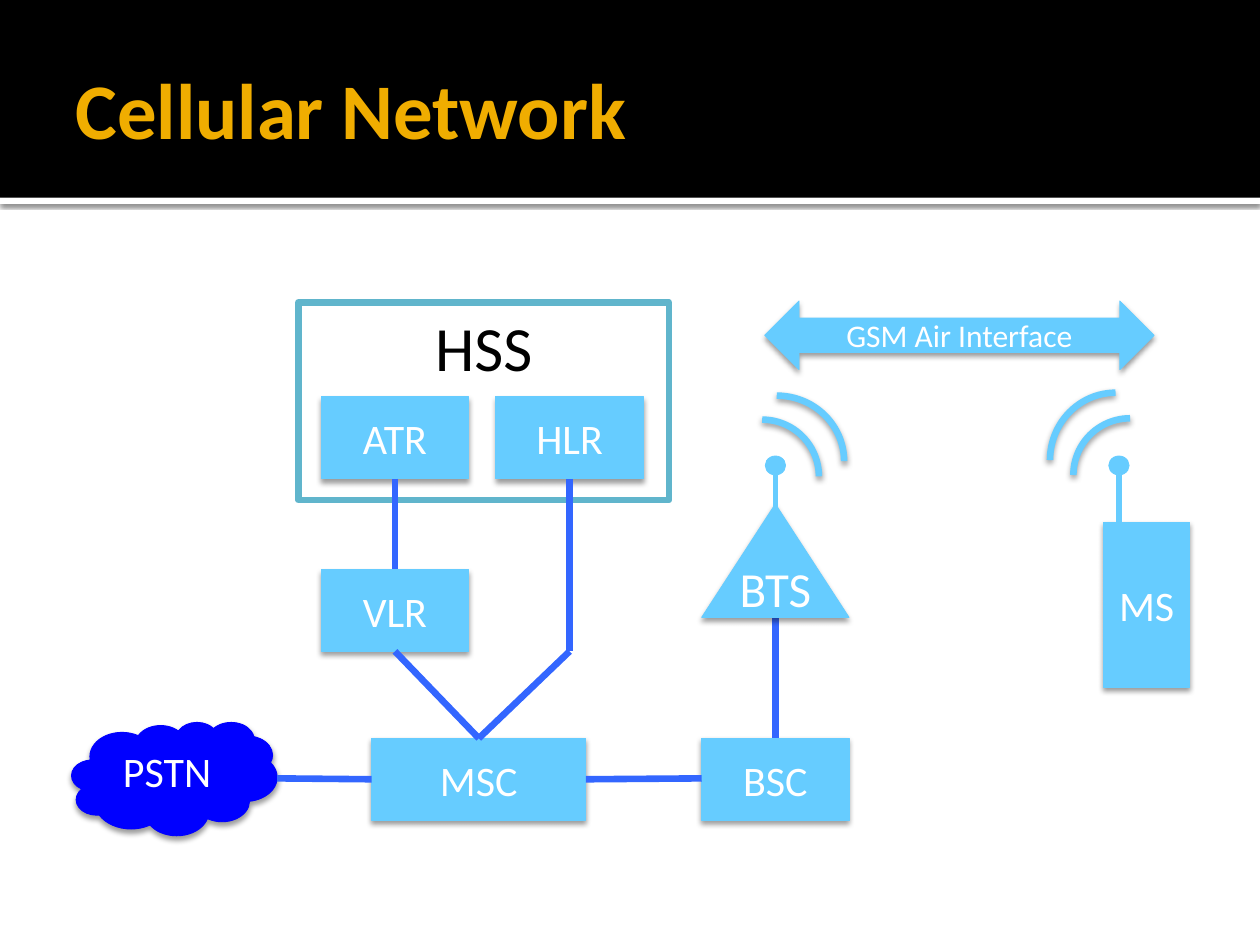
"""Build the cellular network slide."""
import pptx
import pptx.util
import pptx.dml.color
import pptx.enum.shapes
import pptx.enum.text
import pptx.oxml
import pptx.oxml.ns

Pt = pptx.util.Pt
Kind = pptx.enum.shapes.MSO_SHAPE
Anchor = pptx.enum.text.MSO_ANCHOR
Align = pptx.enum.text.PP_ALIGN

THEME = {
    "font": "Calibri",
    "black": "000000", "white": "FFFFFF", "gold": "F0AD00",
    "sky": "66CCFF", "blue": "3366FF", "deep": "0000FF", "teal": "60B5CC",
    "title": 45, "head": 36, "large": 28, "body": 24, "small": 18,
    "thin": 0.5, "stem": 3, "thick": 3.78,
}
SOFT = (38, 3.1, 2)
CURVE = (38, 3.5, 2)
STRIP = (60, 2.5, 0.8)

WIDE, HIGH = 84.2, 46.8
BASE, MID, TOP = 421.9, 325.4, 226.8
LEFT, NEXT, TOWER = 183.6, 283.4, 401
NODES = [
    ("MSC", 212.4, BASE, 122.4, HIGH),
    ("BSC", TOWER, BASE, WIDE, HIGH),
    ("VLR", LEFT, MID, WIDE, HIGH),
    ("ATR", LEFT, TOP, WIDE, HIGH),
    ("HLR", NEXT, TOP, WIDE, HIGH),
    ("MS", 630.7, 298.4, 49.1, 94.3),
]
CLOUD = ("PSTN", 41, 412.6, 117.4, 64.8)
FRAME = ("HSS", 170.6, 172.8, 211.7, 113)
ARROW = ("GSM Air Interface", 437, 172, 222.5, 39.2)
MAST = (TOWER, 288, WIDE, 64.8)
LABEL = ("BTS", TOWER, 312.5, WIDE, HIGH)

HUB = 273.6
VISIT, HOME, BEAM = LEFT + WIDE / 2, NEXT + WIDE / 2, TOWER + WIDE / 2
ROW = BASE + HIGH / 2
LINKS = [
    (HUB, BASE, VISIT, MID + HIGH),
    (VISIT, TOP + HIGH, VISIT, MID),
    (HUB, BASE, HOME, MID + HIGH),
    (HOME, TOP + HIGH, HOME, MID + HIGH),
    (BEAM, 352.8, BEAM, BASE),
    (334.8, ROW, TOWER, ROW - 0.5),
    (158.4, ROW - 0.5, 212.4, ROW),
]
AERIALS = [
    (BEAM, 0, [(403.2, 239.8, 64.8, 64.8), (405.4, 226.1, 77, 74.9)]),
    (639.4, 270, [(613.4, 239, 64.8, 64.8), (599, 225.4, 77, 74.9)]),
]


def color(name):
    return pptx.dml.color.RGBColor.from_string(THEME[name])


def shade(shape, glow):
    alpha, blur, dist = glow
    shape.shadow.inherit = False
    effects = shape.element.spPr.find(pptx.oxml.ns.qn("a:effectLst"))
    effects.append(pptx.oxml.parse_xml(
        f'<a:outerShdw {pptx.oxml.ns.nsdecls("a")} blurRad="{Pt(blur)}" '
        f'dist="{Pt(dist)}" dir="5400000" rotWithShape="0">'
        f'<a:srgbClr val="{THEME["black"]}"><a:alpha val="{alpha * 1000}"/>'
        '</a:srgbClr></a:outerShdw>'))


def write(shape, text, size="body", tone="white", anchor=Anchor.MIDDLE,
          align=Align.CENTER):
    frame = shape.text_frame
    frame.word_wrap = True
    frame.vertical_anchor = anchor
    frame.text = text
    para = frame.paragraphs[0]
    para.alignment = align
    para.font.name = THEME["font"]
    para.font.size = Pt(THEME[size])
    para.font.color.rgb = color(tone)
    return para


def draw(slide, kind, box, fill="sky", line="sky", width="thin", glow=SOFT):
    shape = slide.shapes.add_shape(kind, *map(Pt, box))
    shape.shadow.inherit = False
    if fill:
        shape.fill.solid()
        shape.fill.fore_color.rgb = color(fill)
    else:
        shape.fill.background()
    if line:
        shape.line.color.rgb = color(line)
        shape.line.width = Pt(THEME[width])
    else:
        shape.line.fill.background()
    if glow:
        shade(shape, glow)
    return shape


def link(slide, ends, tone="blue", width="thick"):
    line = slide.shapes.add_connector(
        pptx.enum.shapes.MSO_CONNECTOR.STRAIGHT, *map(Pt, ends))
    line.line.color.rgb = color(tone)
    line.line.width = Pt(THEME[width])
    line.element.spPr.append(pptx.oxml.parse_xml(
        f'<a:effectLst {pptx.oxml.ns.nsdecls("a")}/>'))


def header(slide):
    title = slide.shapes.title
    strip = draw(slide, Kind.RECTANGLE, (0, 113, 720, 3.6),
                 "white", None, glow=STRIP)
    band = draw(slide, Kind.RECTANGLE, (0, 0, 720, 113),
                "black", None, glow=None)
    for part in (strip, band):
        title.element.addprevious(part.element)
    title.left, title.top, title.width, title.height = map(
        Pt, (36, 12.2, 648, 98.6))
    frame = title.text_frame
    frame.margin_left = Pt(7.2)
    frame.margin_right = frame.margin_top = frame.margin_bottom = Pt(3.6)
    para = write(title, "Cellular Network", "title", "gold", align=Align.LEFT)
    para.font.bold = True


def aerial(slide, mid, turn, waves):
    draw(slide, Kind.OVAL, (mid - 5.8, 260.6, 11.6, 10.8), glow=None)
    link(slide, (mid, 303.1, mid, 271.4), "sky", "stem")
    for box in waves:
        wave = draw(slide, Kind.ARC, box, None, width="thick", glow=CURVE)
        wave.rotation = turn


def main():
    deck = pptx.Presentation()
    deck.slide_width, deck.slide_height = Pt(720), Pt(540)
    slide = deck.slides.add_slide(deck.slide_layouts[5])
    header(slide)

    text, *box = CLOUD
    cloud = draw(slide, Kind.CLOUD, box, "deep", "deep")
    write(cloud, text, anchor=Anchor.TOP)
    for text, *box in NODES:
        write(draw(slide, Kind.RECTANGLE, box), text)
    text, *box = FRAME
    frame = draw(slide, Kind.RECTANGLE, box, None, "teal", "thick", None)
    write(frame, text, "head", "black", Anchor.TOP)

    for ends in LINKS:
        link(slide, ends)
    draw(slide, Kind.ISOSCELES_TRIANGLE, MAST)
    text, *box = LABEL
    write(slide.shapes.add_textbox(*map(Pt, box)), text, "large")
    for mid, turn, waves in AERIALS:
        aerial(slide, mid, turn, waves)
    text, *box = ARROW
    write(draw(slide, Kind.LEFT_RIGHT_ARROW, box), text, "small")

    deck.save("out.pptx")


if __name__ == "__main__":
    main()
